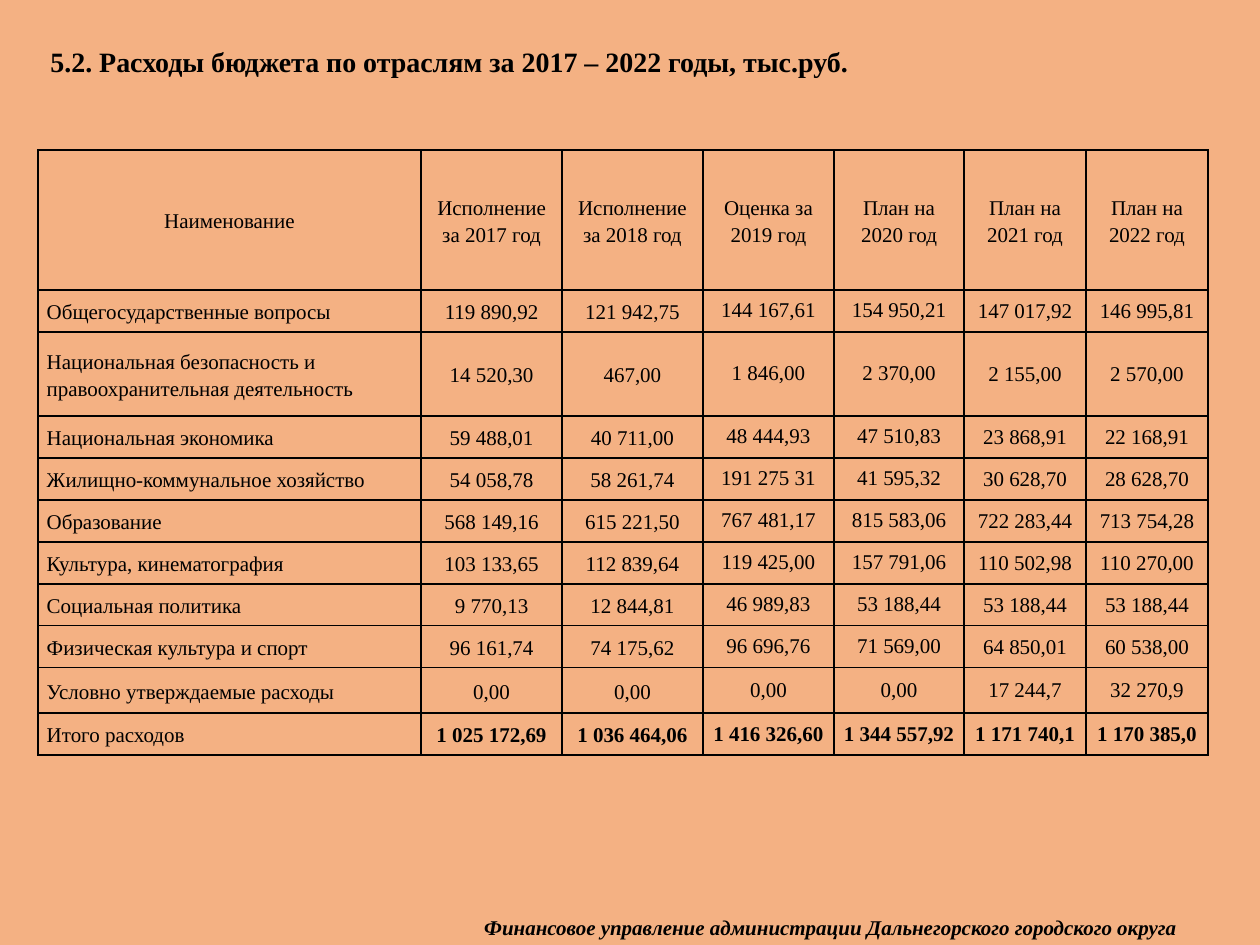
from lxml.etree import SubElement
from pptx import Presentation
from pptx.dml.color import RGBColor
from pptx.enum.text import MSO_ANCHOR, MSO_AUTO_SIZE, PP_ALIGN
from pptx.oxml.ns import qn
from pptx.util import Pt

COLORS = {"background": "F4B183", "ink": "000000"}
FONT = "Times New Roman"

HEADINGS = ["Наименование", "Исполнение за 2017 год", "Исполнение за 2018 год",
            "Оценка за 2019 год", "План на 2020 год", "План на 2021 год", "План на 2022 год"]
EXPENSES = [
    ["Общегосударственные вопросы", "119 890,92", "121 942,75", "144 167,61",
     "154 950,21", "147 017,92", "146 995,81"],
    ["Национальная безопасность и правоохранительная деятельность", "14 520,30", "467,00",
     "1 846,00", "2 370,00", "2 155,00", "2 570,00"],
    ["Национальная экономика", "59 488,01", "40 711,00", "48 444,93",
     "47 510,83", "23 868,91", "22 168,91"],
    ["Жилищно-коммунальное хозяйство", "54 058,78", "58 261,74", "191 275 31",
     "41 595,32", "30 628,70", "28 628,70"],
    ["Образование", "568 149,16", "615 221,50", "767 481,17",
     "815 583,06", "722 283,44", "713 754,28"],
    ["Культура, кинематография", "103 133,65", "112 839,64", "119 425,00",
     "157 791,06", "110 502,98", "110 270,00"],
    ["Социальная политика", "9 770,13", "12 844,81", "46 989,83",
     "53 188,44", "53 188,44", "53 188,44"],
    ["Физическая культура и спорт", "96 161,74", "74 175,62", "96 696,76",
     "71 569,00", "64 850,01", "60 538,00"],
    ["Условно утверждаемые расходы", "0,00", "0,00", "0,00", "0,00", "17 244,7", "32 270,9"],
]
TOTALS = ["Итого расходов", "1 025 172,69", "1 036 464,06", "1 416 326,60",
          "1 344 557,92", "1 171 740,1", "1 170 385,0"]

COLUMN_WIDTHS = [219, 80.5, 80.5, 75, 74.3, 69.7, 69.7]
ROW_HEIGHTS = [80, 24, 48] + [24] * 6 + [26, 24]


class BudgetSlide:
    """Holds the text style and the current slide."""

    def __init__(self, slide):
        self.slide = slide
        fill = slide.background.fill
        fill.solid()
        fill.fore_color.rgb = RGBColor.from_string(COLORS["background"])

    def add_text(self, paragraph, text, size=12, bold=False, italic=False):
        run = paragraph.add_run()
        run.text = text
        font = run.font
        font.name, font.size, font.bold, font.italic = FONT, Pt(size), bold, italic
        font.color.rgb = RGBColor.from_string(COLORS["ink"])

    def title(self, text, left, top, width, height):
        heading = self.slide.shapes.title
        heading.left, heading.top = Pt(left), Pt(top)
        heading.width, heading.height = Pt(width), Pt(height)
        frame = heading.text_frame
        frame.auto_size = MSO_AUTO_SIZE.NONE
        frame.vertical_anchor = MSO_ANCHOR.MIDDLE
        frame.paragraphs[0].alignment = PP_ALIGN.LEFT
        self.add_text(frame.paragraphs[0], text, size=16, bold=True)

    def signature(self, text, left, top, width, height):
        frame = self.slide.shapes.add_textbox(Pt(left), Pt(top), Pt(width), Pt(height)).text_frame
        frame.word_wrap = True
        frame.margin_left = Pt(29)
        self.add_text(frame.paragraphs[0], text, bold=True, italic=True)

    def cell(self, cell, text, spacing, margin, centered, bold):
        cell.margin_left = cell.margin_right = Pt(margin)
        cell.margin_top = cell.margin_bottom = 0
        cell.vertical_anchor = MSO_ANCHOR.MIDDLE
        properties = cell._tc.get_or_add_tcPr()
        for side in ("lnL", "lnR", "lnT", "lnB"):
            border = SubElement(properties, qn(f"a:{side}"), w=str(Pt(1)))
            ink = SubElement(border, qn("a:solidFill"))
            SubElement(ink, qn("a:srgbClr"), val=COLORS["ink"])
        cell.fill.background()
        paragraph = cell.text_frame.paragraphs[0]
        paragraph.alignment = PP_ALIGN.CENTER if centered else PP_ALIGN.LEFT
        paragraph.line_spacing = spacing
        self.add_text(paragraph, text, bold=bold)

    def table(self, rows, left, top):
        table = self.slide.shapes.add_table(
            len(rows), len(COLUMN_WIDTHS), Pt(left), Pt(top),
            Pt(sum(COLUMN_WIDTHS)), Pt(sum(ROW_HEIGHTS))).table
        table.first_row = table.horz_banding = False
        for column, width in zip(table.columns, COLUMN_WIDTHS):
            column.width = Pt(width)
        for row, height in zip(table.rows, ROW_HEIGHTS):
            row.height = Pt(height)
        last = len(rows) - 1
        for r, row in enumerate(rows):
            for c, text in enumerate(row):
                # The plan for 2021 and 2022 is set tighter, but for the last two rows
                tight = c >= 5 and 0 < r < last - 1
                spacing = 1.15 if r == 0 or c < 3 else 1.07 if tight else 1.0
                self.cell(table.cell(r, c), text, spacing, margin=0 if tight else 5,
                          centered=r == 0 or c > 0, bold=r == last and c > 0)


def main():
    presentation = Presentation()
    presentation.slide_width, presentation.slide_height = Pt(720), Pt(540)
    budget = BudgetSlide(presentation.slides.add_slide(presentation.slide_layouts[5]))

    # Department name at the foot
    budget.signature("Финансовое управление администрации Дальнегорского городского округа",
                     247.7, 519, 435.6, 21.8)
    # Expenses by sector
    budget.table([HEADINGS, *EXPENSES, TOTALS], 21.7, 85.7)
    # Heading
    budget.title("5.2. Расходы бюджета по отраслям за 2017 – 2022 годы, тыс.руб.",
                 21.6, 21.6, 493, 26.6)

    presentation.save("out.pptx")


if __name__ == "__main__":
    main()
